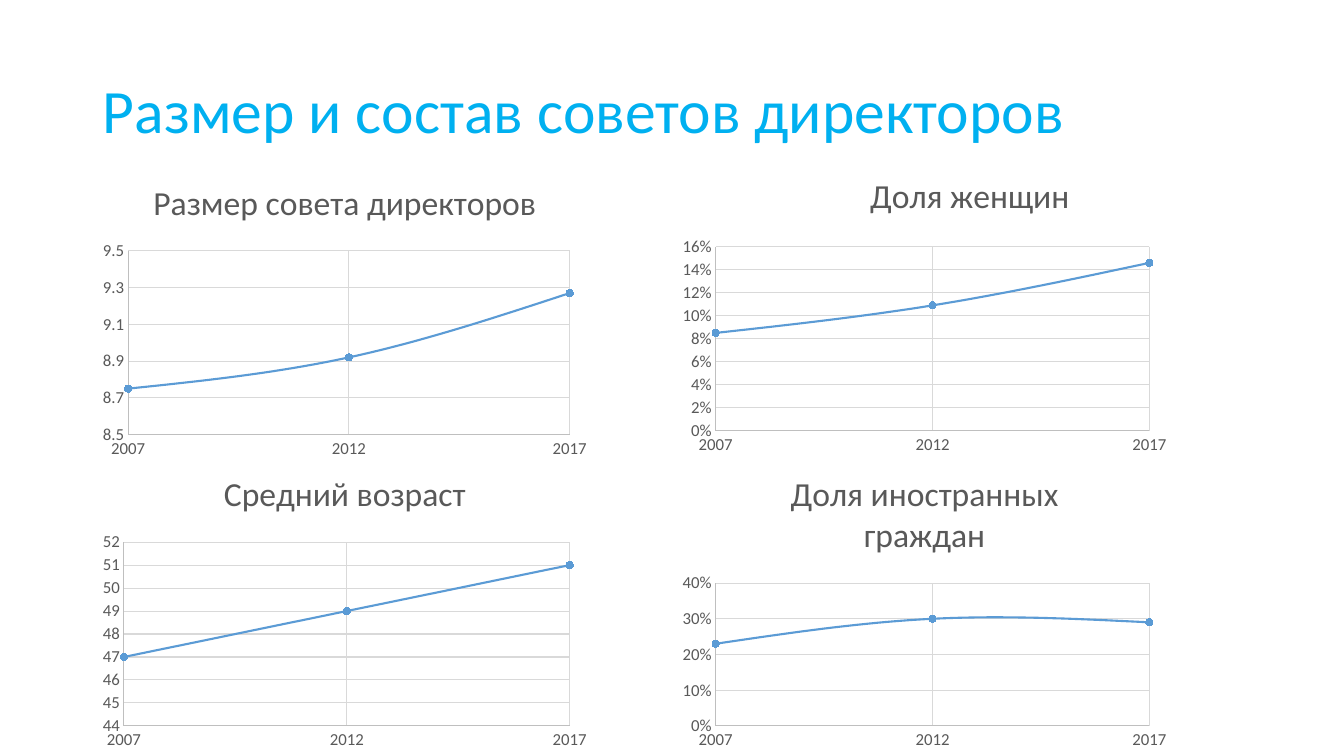
from lxml import etree
from pptx import Presentation
from pptx.chart.data import XyChartData
from pptx.dml.color import RGBColor
from pptx.enum.chart import XL_CHART_TYPE, XL_MARKER_STYLE, XL_TICK_MARK
from pptx.enum.text import MSO_ANCHOR, PP_ALIGN
from pptx.oxml.ns import qn
from pptx.util import Inches, Pt

SMOOTH_SCATTER = XL_CHART_TYPE.XY_SCATTER_SMOOTH
CIRCLE = XL_MARKER_STYLE.CIRCLE
NO_TICK = XL_TICK_MARK.NONE
LEFT = PP_ALIGN.LEFT
MIDDLE = MSO_ANCHOR.MIDDLE

THEME = {
    "font": "Calibri",
    "heading": ("00B0F0", 44),
    "chart": ("000000", 10),
    "chart_title": ("595959", 24),
    "axis": ("595959", 12),
    "axis_line": ("BFBFBF", 0.75),
    "grid_line": ("D9D9D9", 0.75),
    "series_line": ("5B9BD5", 1.5),
    "marker_line": ("5B9BD5", 0.75),
}

COLUMNS = (0.92, 6.67)
ROWS = (1.61, 4.5)
CHART_SIZE = (Inches(5), Inches(3))
YEARS = (2007, 2012, 2017)
YEAR_SCALE = (2007, 2017, 5)
WOMEN = "Доля женщин"
WOMEN_TITLE_LAYOUT = {"xMode": "edge", "yMode": "edge", "x": 0.38, "y": 0.03}

CHARTS = [
    ("Размер совета директоров", COLUMNS[0], ROWS[0], (8.75, 8.92, 9.27), (8.5, 9.5, 0.2), "0.0"),
    ("Средний возраст", COLUMNS[0], ROWS[1], (47, 49, 51), (44, 52, 1), "0"),
    (WOMEN, COLUMNS[1], ROWS[0] - 0.04, (0.085, 0.109, 0.146), (0, 0.16, 0.02), "0%"),
    ("Доля иностранных граждан", COLUMNS[1], ROWS[1], (0.23, 0.3, 0.29), (0, 0.4, 0.1), "0%"),
]


def style_font(font, role):
    color, size = THEME[role]
    for name, value in {"name": THEME["font"], "size": Pt(size), "bold": False}.items():
        setattr(font, name, value)
    font.color.rgb = RGBColor.from_string(color)


def style_line(line, role):
    color, width = THEME[role]
    line.color.rgb = RGBColor.from_string(color)
    line.width = Pt(width)


presentation = Presentation()
presentation.slide_width = Inches(13.33)
presentation.slide_height = Inches(7.5)
slide = presentation.slides.add_slide(presentation.slide_layouts[5])

title = slide.shapes.title
title_box = {"left": COLUMNS[0], "top": 0.4, "width": 11.5, "height": 1.45}
for name, value in title_box.items():
    setattr(title, name, Inches(value))
title.text_frame.text = "Размер и состав советов директоров"
title.text_frame.vertical_anchor = MIDDLE
title_paragraph = title.text_frame.paragraphs[0]
for name, value in {"alignment": LEFT, "line_spacing": 0.9}.items():
    setattr(title_paragraph, name, value)
style_font(title_paragraph.runs[0].font, "heading")

for heading, left, top, values, value_scale, number_format in CHARTS:
    chart_data = XyChartData()
    points = chart_data.add_series(heading)
    for year, value in zip(YEARS, values):
        points.add_data_point(year, value)
    chart = slide.shapes.add_chart(
        SMOOTH_SCATTER, Inches(left), Inches(top), *CHART_SIZE, chart_data
    ).chart
    style_font(chart.font, "chart")
    chart.has_legend = False
    chart.has_title = True
    chart.chart_title.include_in_layout = False
    chart.chart_title.text_frame.text = heading
    style_font(chart.chart_title.text_frame.paragraphs[0].runs[0].font, "chart_title")
    if heading == WOMEN:
        title_element = chart.chart_title._element
        for old_layout in title_element.findall(qn("c:layout")):
            title_element.remove(old_layout)
        layout = etree.Element(qn("c:layout"))
        title_element.find(qn("c:tx")).addnext(layout)
        manual_layout = etree.SubElement(layout, qn("c:manualLayout"))
        for name, value in WOMEN_TITLE_LAYOUT.items():
            etree.SubElement(manual_layout, qn(f"c:{name}")).set("val", str(value))

    axes = (
        (chart.category_axis, YEAR_SCALE, "0"),
        (chart.value_axis, value_scale, number_format),
    )
    for axis, (minimum, maximum, step), label_format in axes:
        axis_format = {
            "minimum_scale": minimum,
            "maximum_scale": maximum,
            "major_unit": step,
            "major_tick_mark": NO_TICK,
            "minor_tick_mark": NO_TICK,
            "has_major_gridlines": True,
        }
        for name, value in axis_format.items():
            setattr(axis, name, value)
        axis.tick_labels.number_format = label_format
        axis.tick_labels.number_format_is_linked = False
        style_font(axis.tick_labels.font, "axis")
        style_line(axis.format.line, "axis_line")
        style_line(axis.major_gridlines.format.line, "grid_line")

    plot = chart.plots[0]
    plot.vary_by_categories = False
    series = plot.series[0]
    series._element.get_or_add_smooth().set("val", "1")
    style_line(series.format.line, "series_line")
    series.marker.style = CIRCLE
    series.marker.size = 5
    series.marker.format.fill.solid()
    series.marker.format.fill.fore_color.rgb = RGBColor.from_string(THEME["marker_line"][0])
    style_line(series.marker.format.line, "marker_line")

presentation.save("out.pptx")
